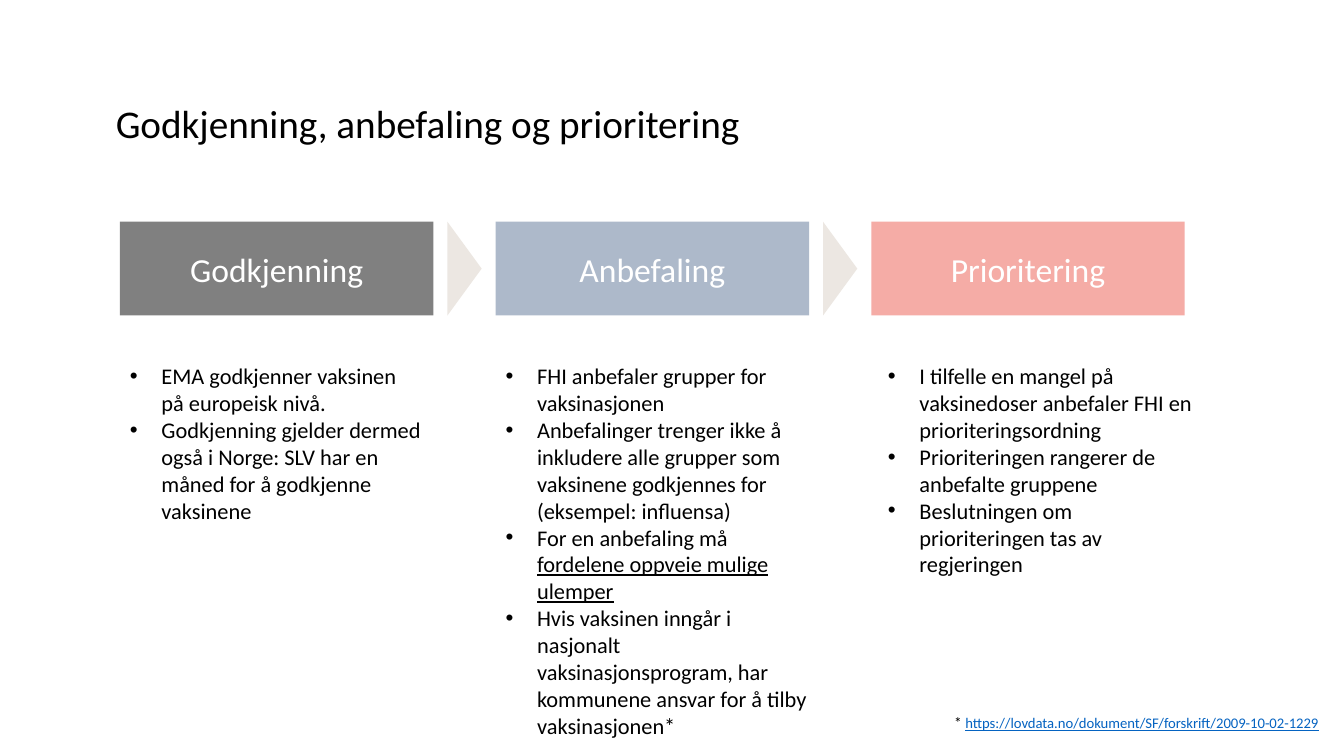
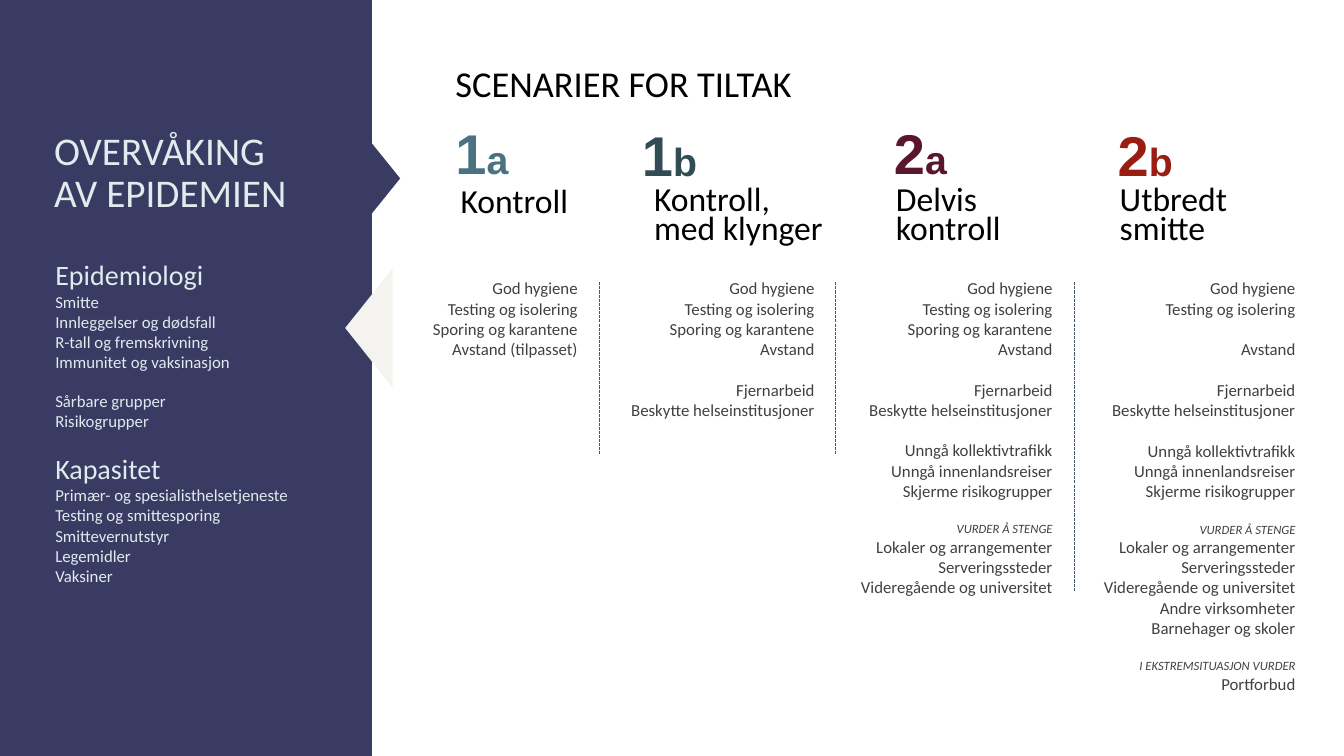
import pptx
import pptx.util
import pptx.dml.color
import pptx.enum.dml
import pptx.enum.shapes
import pptx.enum.text
import lxml.etree
from pptx.oxml.ns import qn

# Shared style: lengths are grid cells, 40 columns by 22.5 rows
COLS, ROWS = 40, 22.5
CELL = pptx.util.Inches(13.33) / COLS
INK, WHITE, NAVY, PALE, GREY = "000000", "FFFFFF", "3A3B63", "E1EAED", "404040"
RULE, SAND, LINK = "44546A", "ECE7E2", "0563C1"
GAP = 14.65  # one line of 12 pt text
DENT = 0.94  # hanging indent of bullets
BASE = dict(size=12, color=INK, font="Calibri", bold=None, italic=None,
            under=None, align="LEFT", before=0, lead=None, dent=0, bullet=False)
KINDS = pptx.enum.shapes.MSO_SHAPE


def cells(count):
    return pptx.util.Emu(round(count * CELL))


def tint(code):
    return pptx.dml.color.RGBColor.from_string(code)


def split(part):
    """Return a part's words and its own format."""
    return part if isinstance(part, tuple) else (part, {})


def write(frame, lines, **form):
    """Write one paragraph per line; a line is text or a list of runs."""
    for num, line in enumerate(lines):
        words, own = split(line)
        look = {**BASE, **form, **own}
        para = frame.paragraphs[0] if num == 0 else frame.add_paragraph()
        if look["dent"]:
            props = para._p.get_or_add_pPr()
            props.set("marL", str(cells(look["dent"])))
            props.set("indent", str(-cells(look["dent"]) if look["bullet"] else 0))
            if look["bullet"]:
                face = lxml.etree.SubElement(props, qn("a:buFont"))
                face.set("typeface", "Arial")
                lxml.etree.SubElement(props, qn("a:buChar")).set("char", "•")
        para.alignment = getattr(pptx.enum.text.PP_ALIGN, look["align"])
        para.space_before = pptx.util.Pt(look["before"])
        if look["lead"]:
            para.line_spacing = pptx.util.Pt(look["lead"])
        for part in [words] if isinstance(words, str) else words:
            text, own = split(part)
            mark = {**look, **own}
            run = para.add_run()
            run.text = text
            font = run.font
            font.name, font.size = mark["font"], pptx.util.Pt(mark["size"])
            font.bold, font.italic = mark["bold"], mark["italic"]
            font.underline = mark["under"]
            font.color.rgb = tint(mark["color"])


def stack(groups):
    """Join groups of lines, with a gap above each and small captions."""
    lines = []
    for group in groups:
        for num, line in enumerate(group):
            own = dict(before=GAP if lines and num == 0 else 0)
            if line.isupper():
                own.update(size=9, italic=True)
            lines.append((line, own))
    return lines


class Deck:
    def __init__(self):
        self.file = pptx.Presentation()
        self.file.slide_width = cells(COLS)
        self.file.slide_height = cells(ROWS)

    def page(self):
        self.slide = self.file.slides.add_slide(self.file.slide_layouts[6])

    def text(self, left, top, width, height, lines, **form):
        box = self.slide.shapes.add_textbox(*map(cells, (left, top, width, height)))
        box.text_frame.word_wrap = True
        write(box.text_frame, lines, **form)

    def shape(self, kind, left, top, width, height, fill):
        item = self.slide.shapes.add_shape(
            kind, *map(cells, (left, top, width, height)))
        item.shadow.inherit = False
        item.fill.solid()
        item.fill.fore_color.rgb = tint(fill)
        item.line.fill.background()
        return item

    def block(self, left, top, width, height, fill, label=None):
        item = self.shape(KINDS.RECTANGLE, left, top, width, height, fill)
        if label:
            frame = item.text_frame
            frame.vertical_anchor = pptx.enum.text.MSO_ANCHOR.MIDDLE
            write(frame, [label], size=24, color=WHITE, align="CENTER")

    def wedge(self, mid, row, base, depth, fill, turn=90):
        item = self.shape(KINDS.ISOSCELES_TRIANGLE, mid - base / 2,
                          row - depth / 2, base, depth, fill)
        item.rotation = turn

    def dash(self, col, top, end):
        line = self.slide.shapes.add_connector(
            pptx.enum.shapes.MSO_CONNECTOR.STRAIGHT,
            *map(cells, (col, top, col, end)))
        line.line.color.rgb = tint(RULE)
        line.line.width = pptx.util.Pt(0.75)
        line.line.dash_style = pptx.enum.dml.MSO_LINE.SQUARE_DOT
        lxml.etree.SubElement(line._element.spPr, qn("a:effectLst"))


def steps(deck):
    """Approval, advice and priority as three steps."""
    deck.page()
    deck.text(3.15, 2.82, 26.28, 1.71,
              ["Godkjenning, anbefaling og prioritering"], size=28)
    left, top, step, width, height = 3.57, 6.6, 11.18, 9.33, 2.79
    # Label, fill, text shift, text width, bullets
    parts = [
        ("Godkjenning", "808080", 0, 9.33, [
            "EMA godkjenner vaksinen på europeisk nivå.",
            "Godkjenning gjelder dermed også i Norge: SLV har en måned "
            "for å godkjenne vaksinene"]),
        ("Anbefaling", "ADB9CA", 0, 9.93, [
            "FHI anbefaler grupper for vaksinasjonen",
            "Anbefalinger trenger ikke å inkludere alle grupper som "
            "vaksinene godkjennes for",
            ("(eksempel: influensa)", dict(bullet=False)),
            ["For en anbefaling må ",
             ("fordelene oppveie mulige ulemper", dict(under=True))],
            "Hvis vaksinen inngår i nasjonalt vaksinasjonsprogram, har "
            "kommunene ansvar for å tilby vaksinasjonen*"]),
        ("Prioritering", "F5ACA6", 0.2, 9.93, [
            "I tilfelle en mangel på vaksinedoser anbefaler FHI en "
            "prioriteringsordning",
            "Prioriteringen rangerer de anbefalte gruppene",
            "Beslutningen om prioriteringen tas av regjeringen"]),
    ]
    for num, (label, fill, shift, wide, lines) in enumerate(parts):
        col = left + num * step
        deck.block(col, top, width, height, fill, label)
        deck.text(col + shift, 10.64, wide, 11.6, lines,
                  size=16, dent=DENT, bullet=True)
        if num:
            deck.wedge(col - (step - width) / 2, top + height / 2,
                       height, 1.02, SAND)
    # Source note
    deck.text(28.1, 21.09, 11.9, 0.87, [[
        ("* ", dict(size=11)),
        ("https://lovdata.no/dokument/SF/forskrift/2009-10-02-1229",
         dict(color=LINK, under=True))]], size=10.5)


def scenes(deck):
    """Scenarios beside a panel on watching the epidemic."""
    deck.page()
    # Side panel
    deck.block(0, 0, 11.07, ROWS, NAVY)
    deck.wedge(11.22, 5.31, 3.42, 1.38, NAVY)
    deck.wedge(10.98, 9.76, 3.54, 1.41, "F5F3F0", turn=270)
    deck.text(1.32, 3.75, 8.1, 2.82, ["OVERVÅKING", "AV EPIDEMIEN"],
              size=28, color=PALE, lead=30)
    deck.text(1.35, 7.53, 7.92, 11.46, [
        ("Epidemiologi", dict(size=20)),
        "Smitte", "Innleggelser og dødsfall", "R-tall og fremskrivning",
        "Immunitet og vaksinasjon",
        ("Sårbare grupper", dict(before=13)), "Risikogrupper",
        ("Kapasitet", dict(size=20, before=GAP)),
        "Primær- og spesialisthelsetjeneste", "Testing og smittesporing",
        "Smittevernutstyr", "Legemidler", "Vaksiner"], color=PALE)
    deck.text(13.26, 1.68, 17.52, 1.62, ["SCENARIER FOR TILTAK"], size=26)

    # Measures shared by the scenarios
    clean = ["God hygiene", "Testing og isolering"]
    trace = clean + ["Sporing og karantene"]
    work = ["Fjernarbeid", "Beskytte helseinstitusjoner"]
    avoid = ["Unngå kollektivtrafikk", "Unngå innenlandsreiser",
             "Skjerme risikogrupper"]
    close = ["VURDER Å STENGE", "Lokaler og arrangementer",
             "Serveringssteder", "Videregående og universitet"]
    wide = close + ["Andre virksomheter", "Barnehager og skoler"]
    last = ["I EKSTREMSITUASJON VURDER", "Portforbud"]

    # Tag, colour, tag place, name, name place, list left and width, groups
    cases = [
        ("1a", "4A7280", (13.26, 3.39), ["Kontroll"], (13.41, 5.22),
         (12.21, 5.28), [trace + ["Avstand (tilpasset)"]]),
        ("1b", "324C56", (18.81, 3.45), ["Kontroll,", "med klynger"],
         (19.17, 5.46), (18, 6.54), [trace + ["Avstand"], work]),
        ("2a", "59162D", (26.31, 3.39), ["Delvis", "kontroll"],
         (26.37, 5.46), (24.93, 6.69),
         [trace + ["Avstand"], work, avoid, close]),
        ("2b", "9A1D12", (32.97, 3.45), ["Utbredt", "smitte"],
         (33.03, 5.46), (31.8, 7.05),
         [clean, ["Avstand"], work, avoid, wide, last]),
    ]
    for tag, hue, spot, name, place, (left, width), groups in cases:
        deck.text(*spot, 2.7, 2.31, [[tag[0], (tag[1], dict(size=28))]],
                  size=40, font="Arial", bold=True, color=hue)
        deck.text(*place, 5.75, 2.1, name, size=24,
                  lead=21 if len(name) > 1 else None)
        count = sum(map(len, groups)) + len(groups) - 1
        deck.text(left, 8.13, width, count * 0.61 + 0.3, stack(groups),
                  color=GREY, align="RIGHT")
    for col, end in [(17.85, 13.5), (24.87, 13.5), (31.98, 17.61)]:
        deck.dash(col, 8.4, end)


def main():
    deck = Deck()
    steps(deck)
    scenes(deck)
    deck.file.save("out.pptx")


if __name__ == "__main__":
    main()
